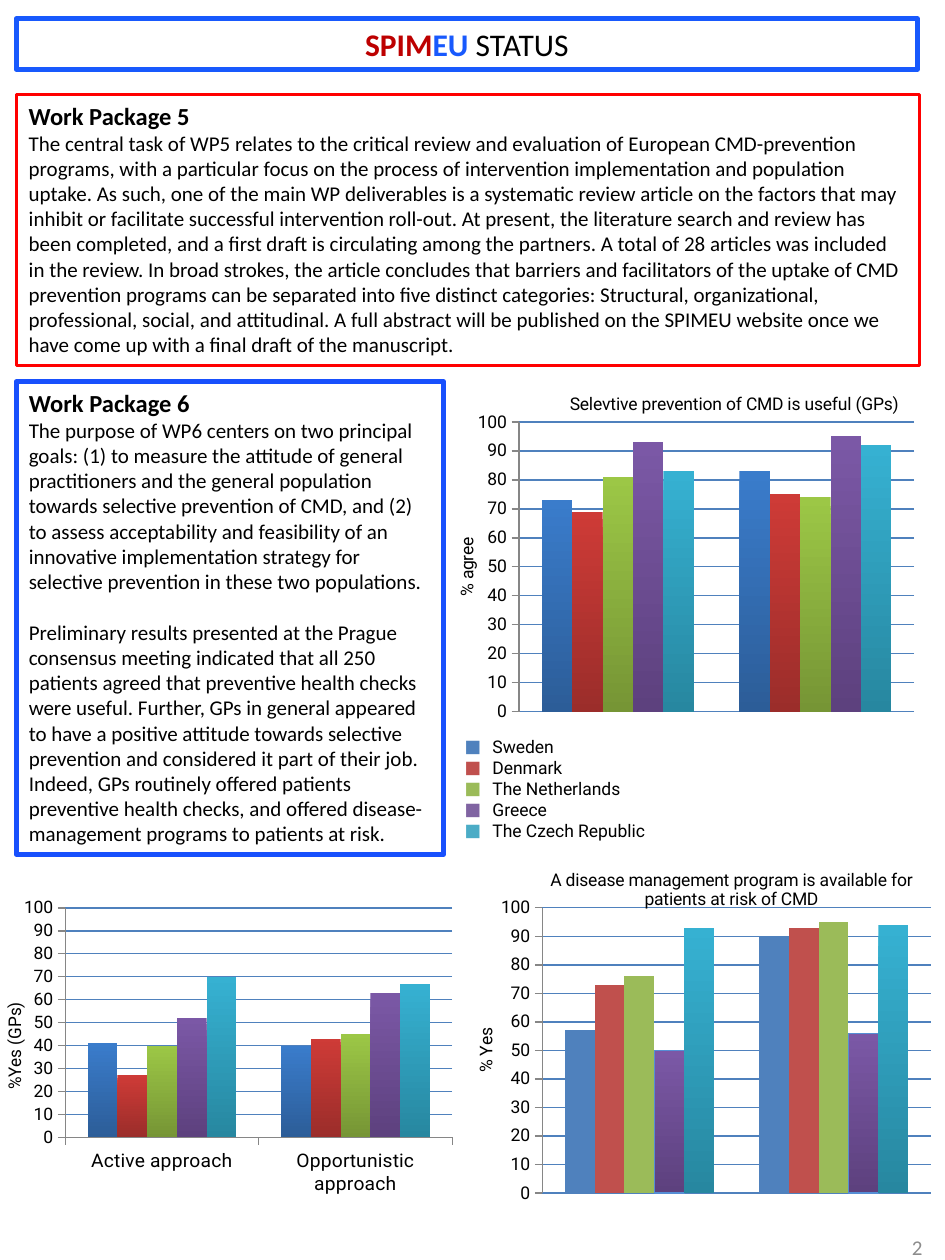
from lxml import etree
from pptx import Presentation, util as u
from pptx.chart.data import CategoryChartData
from pptx.dml.color import RGBColor
from pptx.enum import chart as ec, shapes, text
from pptx.oxml.ns import qn

FLAT = ["4F81BD", "C0504D", "9BBB59", "8064A2", "4BACC6"]
TOP = ["3A7CCB", "CE3B37", "9CC746", "7B58A6", "36B1D2"]
BASE = ["2C5D98", "9B2D2A", "769535", "5D417E", "2787A0"]
LANDS = ["Sweden", "Denmark", "The Netherlands", "Greece", "The Czech Republic"]

TASK = (
    "The central task of WP5 relates to the critical review and evaluation of European "
    "CMD-prevention programs, with a particular focus on the process of intervention "
    "implementation and population uptake. As such, one of the main WP deliverables is a "
    "systematic review article on the factors that may inhibit or facilitate successful "
    "intervention roll-out. "
)
STATE = (
    "At present, the literature search and review has been completed, and a first draft is "
    "circulating among the partners. A total of 28 articles was included in the review. In "
    "broad strokes, the article concludes that barriers and facilitators of the uptake of CMD "
    "prevention programs can be separated into five distinct categories: Structural, "
    "organizational, professional, social, and attitudinal. A full abstract will be published "
    "on the SPIMEU website once we have come up with a final draft of the manuscript."
)
GOALS = (
    "The purpose of WP6 centers on two principal goals: (1) to measure the attitude of general "
    "practitioners and the general population towards selective prevention of CMD, and (2) to "
    "assess acceptability and feasibility of an innovative implementation strategy for "
    "selective prevention in these two populations."
)
FINDS = (
    "Preliminary results presented at the Prague consensus meeting indicated that all 250 "
    "patients agreed that preventive health checks were useful. Further, GPs in general "
    "appeared to have a positive attitude towards selective prevention and considered it part "
    "of their job. Indeed, GPs routinely offered patients preventive health checks, and offered "
    "disease-management programs to patients at risk."
)


def rgb(code):
    return RGBColor.from_string(code)


def style(font, size, face="Calibri", color="000000", bold=False):
    font.size = u.Pt(size)
    font.name = face
    font.color.rgb = rgb(color)
    font.bold = bold


def add_run(para, words, size, **look):
    run = para.add_run()
    run.text = words
    style(run.font, size, **look)


def add_box(slide, area, color, width, fill=None):
    box = slide.shapes.add_shape(shapes.MSO_SHAPE.RECTANGLE, *map(u.Inches, area))
    box.shadow.inherit = False
    if fill:
        box.fill.solid()
        box.fill.fore_color.rgb = rgb(fill)
    else:
        box.fill.background()
    box.line.color.rgb = rgb(color)
    box.line.width = u.Pt(width)
    frame = box.text_frame
    frame.word_wrap = True
    frame.vertical_anchor = text.MSO_ANCHOR.TOP
    return frame


def add_panel(slide, area, color, width, head, parts, fill=None):
    frame = add_box(slide, area, color, width, fill)
    para = frame.paragraphs[0]
    para.alignment = text.PP_ALIGN.LEFT
    add_run(para, head, 14, bold=True)
    for i, runs in enumerate(parts):
        para = frame.add_paragraph()
        para.alignment = text.PP_ALIGN.LEFT
        para.space_before = u.Pt(14.6 if i else 0)
        for words in runs:
            add_run(para, words, 12)


def add_label(slide, area):
    frame = slide.shapes.add_textbox(*map(u.Inches, area)).text_frame
    frame.word_wrap = True
    return frame


def add_key(slide, area):
    frame = add_label(slide, area)
    for i, (land, color) in enumerate(zip(LANDS, FLAT)):
        para = frame.add_paragraph() if i else frame.paragraphs[0]
        props = para._p.get_or_add_pPr()
        props.set("marL", str(u.Inches(0.22)))
        props.set("indent", str(-u.Inches(0.22)))
        tint = etree.SubElement(props, qn("a:buClr"))
        etree.SubElement(tint, qn("a:srgbClr"), val=color)
        etree.SubElement(props, qn("a:buFont"), typeface="Roboto")
        etree.SubElement(props, qn("a:buChar"), char="■")
        add_run(para, land, 10, face="Roboto")


def place(node, index, **spots):
    for old in node.findall(qn("c:layout")):
        node.remove(old)
    layout = etree.Element(qn("c:layout"))
    manual = etree.SubElement(layout, qn("c:manualLayout"))
    if "w" in spots:
        etree.SubElement(manual, qn("c:layoutTarget"), val="inner")
    for side in "xy":
        etree.SubElement(manual, qn(f"c:{side}Mode"), val="edge")
    for name, value in spots.items():
        etree.SubElement(manual, qn(f"c:{name}"), val=str(value))
    node.insert(index, layout)


def set_title(owner, words):
    para = owner.text_frame.paragraphs[0]
    add_run(para, words, 10, face="Roboto")


def paint(bar, i, flat):
    fill = bar.format.fill
    if flat:
        fill.solid()
        fill.fore_color.rgb = rgb(FLAT[i])
        return
    fill.gradient()
    fill.gradient_angle = 270
    for stop, color, spot in zip(fill.gradient_stops, (TOP[i], BASE[i]), (0, 1)):
        stop.color.rgb = rgb(color)
        stop.position = spot


def add_bars(slide, area, plot, cats, rows, unit, title=None, spot=None, flat=0):
    data = CategoryChartData()
    data.categories = cats
    for land, row in zip(LANDS, rows):
        data.add_series(land, row)
    kind = ec.XL_CHART_TYPE.COLUMN_CLUSTERED
    chart = slide.shapes.add_chart(kind, *map(u.Inches, area), data).chart
    style(chart.font, 10, face="Roboto")
    chart.has_legend = False
    chart.has_title = bool(title)
    if title:
        set_title(chart.chart_title, title)
        place(chart.chart_title._element, 1, x=spot[0], y=spot[1])
    area_xml = chart._chartSpace.chart.plotArea
    place(area_xml, 0, **dict(zip("xywh", plot)))

    bars = chart.plots[0]
    bars.gap_width = 150
    bars.overlap = 0
    bars.vary_by_categories = False
    for i, bar in enumerate(bars.series):
        paint(bar, i, i < flat)

    axis = chart.value_axis
    axis.minimum_scale, axis.maximum_scale, axis.major_unit = 0, 100, 10
    axis.has_major_gridlines = True
    grid = axis.major_gridlines.format.line
    grid.color.rgb = rgb("4F81BD")
    grid.width = u.Pt(0.75)
    set_title(axis.axis_title, unit)
    base = chart.category_axis
    base.visible = not title
    style(base.tick_labels.font, 11, face="Roboto")
    for edge in (axis, base):
        edge.major_tick_mark = ec.XL_TICK_MARK.OUTSIDE
        edge.format.line.color.rgb = rgb("868686")
    return bars


def main():
    deck = Presentation()
    deck.slide_width, deck.slide_height = u.Inches(7.5), u.Inches(10)
    slide = deck.slides.add_slide(deck.slide_layouts[6])

    page = add_label(slide, (5.67, 9.63, 1.75, 0.53))
    page.vertical_anchor = text.MSO_ANCHOR.MIDDLE
    page.paragraphs[0].alignment = text.PP_ALIGN.RIGHT
    add_run(page.paragraphs[0], "2", 12, color="8C8C8C")

    head = add_box(slide, (0.13, 0.15, 7.15, 0.4), "1859FD", 3).paragraphs[0]
    head.alignment = text.PP_ALIGN.CENTER
    add_run(head, "SPIM", 18, color="BD0000", bold=True)
    add_run(head, "EU ", 18, color="1859FD", bold=True)
    add_run(head, "STATUS", 18)

    add_panel(slide, (0.13, 3.03, 3.39, 3.75), "1850FD", 3, "Work Package 6", [[GOALS], [FINDS]])
    add_panel(slide, (0.13, 0.75, 7.17, 2.15), "FF0000", 2, "Work Package 5", [[TASK, STATE]], "FFFFFF")

    add_bars(slide, (3.59, 3.03, 3.78, 2.91), (0.14, 0.11, 0.83, 0.79), ["1", "2"],
             [(73, 83), (69, 75), (81, 74), (93, 95), (83, 92)], "% agree",
             "Selevtive prevention of CMD is useful (GPs)", (0.24, 0.02))
    care = add_bars(slide, (3.74, 6.81, 3.76, 2.83), (0.15, 0.14, 0.82, 0.8), ["1", "2"],
                    [(57, 90), (73, 93), (76, 95), (50, 56), (93, 94)], "% Yes",
                    "A disease management program is available for patients at risk of CMD",
                    (0.16, 0.02), flat=3)
    rim = care.series[3].format.line
    rim.color.rgb = rgb("558ED5")
    rim.width = u.Pt(0.75)
    add_bars(slide, (0, 7.13, 3.7, 2.36), (0.14, 0.03, 0.83, 0.79),
             ["Active approach", "Opportunistic approach"],
             [(41, 40), (27, 43), (40, 45), (52, 63), (70, 67)], "%Yes (GPs)")
    add_key(slide, (3.59, 5.79, 1.64, 1.11))
    deck.save("out.pptx")


if __name__ == "__main__":
    main()
